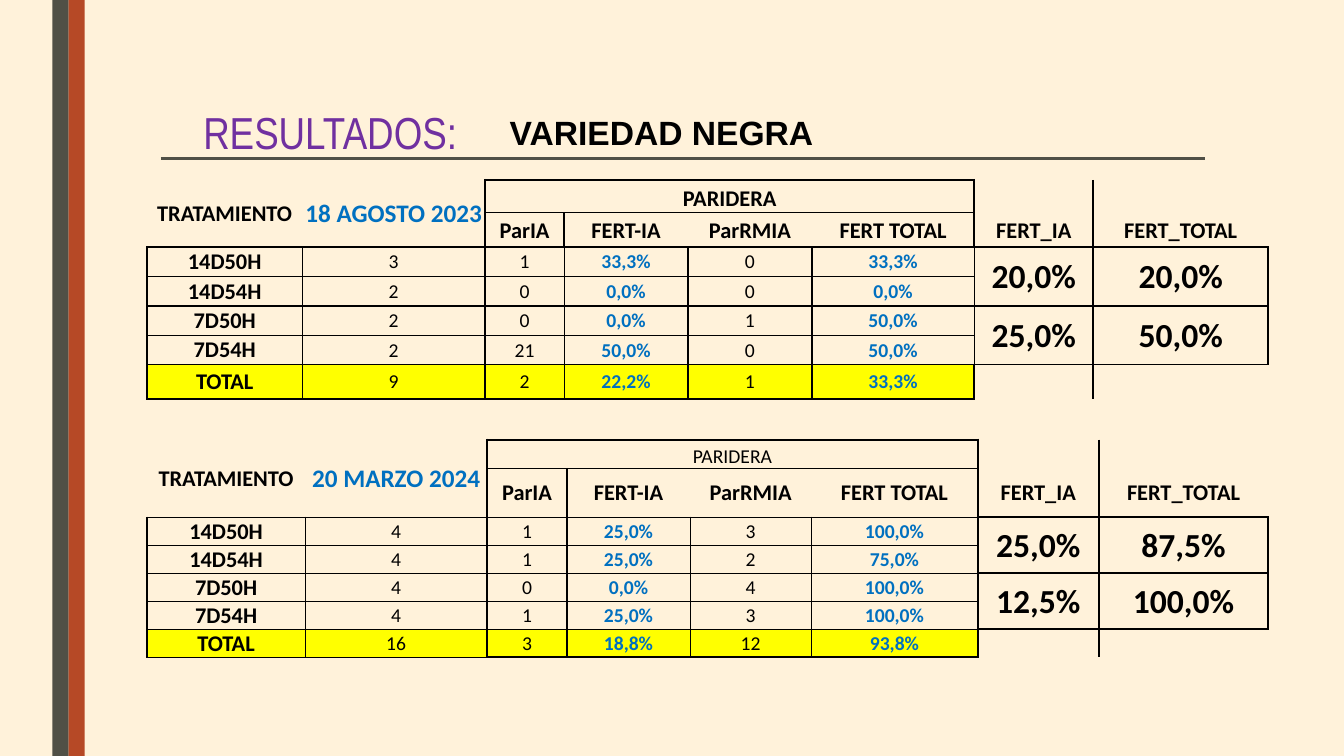
from dataclasses import dataclass

import pptx
import pptx.dml.color
import pptx.enum.shapes
import pptx.enum.text
import pptx.oxml.ns
import pptx.util
from lxml import etree

Pt = pptx.util.Pt
RGB = pptx.dml.color.RGBColor.from_string
ANCHOR = pptx.enum.text.MSO_ANCHOR
ALIGN = pptx.enum.text.PP_ALIGN
qn = pptx.oxml.ns.qn


@dataclass(frozen=True)
class Theme:
    page: str = "FFF2DA"
    olive: str = "505046"
    rust: str = "B64926"
    purple: str = "7030A0"
    blue: str = "0070C0"
    ink: str = "000000"
    total: str = "FFFF00"
    title_font: str = "Arial Narrow"
    variety_font: str = "Arial"
    table_font: str = "Calibri"
    title: int = 32
    big: int = 24
    date: int = 18
    label: int = 16
    value: int = 14
    thick: float = 1.5
    medium: float = 1
    thin: float = 0.5


T = Theme()
NO_GRID_STYLE = "{2D5ABB26-0587-4C30-8999-92F81FD0307C}"
PERCENT_COLS = (3, 5)
RATE_COLS = (6, 7)
BODY_ROW, TOTAL_ROW = 2, 6
SUBHEADS = ["", "", "ParIA", "FERT-IA", "ParRMIA", "FERT TOTAL", "FERT_IA", "FERT_TOTAL"]

# Border boxes: first row, first column, end row, end column, outer width, inner width.
# A box without rows or columns is a single line.
BANDED = [(2, 0, 4, 6, T.thick, T.medium), (4, 0, 6, 6, T.thick, T.medium),
          (6, 0, 7, 6, T.thick, T.medium), (2, 6, 6, 6, T.medium, None)]
EVEN = [(2, 0, 7, 6, T.medium, T.medium), (2, 2, 7, 2, T.thick, None),
        (2, 6, 7, 6, T.thick, None), (7, 2, 7, 6, T.thick, None)]

AUGUST = dict(
    date="18 AGOSTO 2023",
    cols=[111, 130.5, 56.5, 88.5, 88.5, 116, 85, 125],
    rows=[23.5, 24.5, 21, 21, 21, 21, 24.5],
    group_style=(T.label, T.ink, True),
    body_boxes=BANDED,
    body=[["14D50H", "3", "1", "33,3%", "0", "33,3%", "20,0%", "20,0%"],
          ["14D54H", "2", "0", "0,0%", "0", "0,0%", "", ""],
          ["7D50H", "2", "0", "0,0%", "1", "50,0%", "25,0%", "50,0%"],
          ["7D54H", "2", "21", "50,0%", "0", "50,0%", "", ""],
          ["TOTAL", "9", "2", "22,2%", "1", "33,3%", "", ""]])
MARCH = dict(
    date="20 MARZO 2024",
    cols=[113, 130, 57, 88, 86.5, 119, 86.5, 121],
    rows=[20.5, 35, 20, 20, 20, 20, 20],
    group_style=(T.value, T.ink, False),
    body_boxes=EVEN,
    body=[["14D50H", "4", "1", "25,0%", "3", "100,0%", "25,0%", "87,5%"],
          ["14D54H", "4", "1", "25,0%", "2", "75,0%", "", ""],
          ["7D50H", "4", "0", "0,0%", "4", "100,0%", "12,5%", "100,0%"],
          ["7D54H", "4", "1", "25,0%", "3", "100,0%", "", ""],
          ["TOTAL", "16", "3", "18,8%", "12", "93,8%", "", ""]])


def style_text(p, font, size, color, bold=False):
    for r in p.runs:
        r.font.name, r.font.size, r.font.bold = font, Pt(size), bold
        r.font.color.rgb = RGB(color)


def add_stripe(s, left, top, width, height, color):
    sp = s.shapes.add_shape(pptx.enum.shapes.MSO_SHAPE.RECTANGLE,
                            Pt(left), Pt(top), Pt(width), Pt(height))
    sp.shadow.inherit = False
    sp.fill.solid()
    sp.fill.fore_color.rgb = RGB(color)
    sp.line.fill.background()


def add_backdrop(s, left, top, height):
    s.background.fill.solid()
    s.background.fill.fore_color.rgb = RGB(T.page)
    for i, color in enumerate((T.olive, T.rust)):
        add_stripe(s, left + i * 11.5, top, 11.5, height, color)


def add_heading(s, left, top, width, height):
    sp = s.shapes.title
    sp.left, sp.top, sp.width, sp.height = Pt(left + 23), Pt(top), Pt(341), Pt(height)
    variety = s.shapes.add_textbox(Pt(left + 218), Pt(top + 5), Pt(279), Pt(36))
    for box, text, align, style in (
            (sp, "RESULTADOS:", ALIGN.LEFT, (T.title_font, T.title, T.purple)),
            (variety, "VARIEDAD NEGRA", ALIGN.CENTER, (T.variety_font, T.big, T.ink, True))):
        tf = box.text_frame
        tf.text = text
        tf.word_wrap = True
        tf.vertical_anchor = ANCHOR.MIDDLE
        tf.paragraphs[0].alignment = align
        style_text(tf.paragraphs[0], *style)
    rule_y = Pt(top + height - 3.5)
    rule = s.shapes.add_connector(pptx.enum.shapes.MSO_CONNECTOR.STRAIGHT,
                                  Pt(left), rule_y, Pt(left + width), rule_y)
    rule.line.color.rgb = RGB(T.olive)
    rule.line.width = Pt(2.25)
    etree.SubElement(rule._element.spPr, qn("a:effectLst"))


def border_edges(boxes):
    """Map each edge (direction, row, column) to its line width."""
    edges = {}
    for r0, c0, r1, c1, outer, inner in boxes:
        for r in range(r0, r1):
            for c in range(c0, c1 + 1):
                edges["v", r, c] = outer if c in (c0, c1) else inner
        for r in range(r0, r1 + 1):
            for c in range(c0, c1):
                edges["h", r, c] = outer if r in (r0, r1) else inner
    return edges


def draw_borders(cell, r, c, edges):
    tcPr = cell._tc.get_or_add_tcPr()
    rows = cell.span_height if cell.is_merge_origin else 1
    cols = cell.span_width if cell.is_merge_origin else 1
    for tag, edge in (("a:lnL", ("v", r, c)), ("a:lnR", ("v", r, c + cols)),
                      ("a:lnT", ("h", r, c)), ("a:lnB", ("h", r + rows, c))):
        if edges.get(edge):
            ln = etree.SubElement(tcPr, qn(tag), w=str(int(Pt(edges[edge]))))
            fill = etree.SubElement(ln, qn("a:solidFill"))
            etree.SubElement(fill, qn("a:srgbClr"), val=T.ink)


def cell_style(r, c, group_style):
    """Return size, colour and weight for a table position."""
    if r < BODY_ROW:
        if (r, c) == (0, 1):
            return T.date, T.blue, True
        return group_style if (r, c) == (0, 2) else (T.label, T.ink, True)
    if c in RATE_COLS:
        return T.big, T.ink, True
    if c in PERCENT_COLS:
        return T.value, T.blue, True
    return (T.label, T.ink, True) if c == 0 else (T.value, T.ink, False)


def fill_cell(cell, text, style):
    cell.margin_left = cell.margin_right = cell.margin_top = Pt(0.7)
    cell.margin_bottom = Pt(0)
    cell.vertical_anchor = ANCHOR.MIDDLE
    p = cell.text_frame.paragraphs[0]
    p.text = text
    p.alignment = ALIGN.CENTER
    style_text(p, T.table_font, *style)
    if not text:
        etree.SubElement(p._p, qn("a:endParaRPr"), sz=str(T.value * 100))


def add_results(s, left, top, date, cols, rows, group_style, body_boxes, body):
    texts = [["TRATAMIENTO", date, "PARIDERA"] + [""] * 5, SUBHEADS] + body
    frame = s.shapes.add_table(len(rows), len(cols), Pt(left), Pt(top),
                               Pt(sum(cols)), Pt(sum(rows)))
    tbl = frame.table
    tbl.first_row = tbl.horz_banding = False
    tbl._tbl.tblPr.find(qn("a:tableStyleId")).text = NO_GRID_STYLE
    for col, width in zip(tbl.columns, cols):
        col.width = Pt(width)
    for row, height in zip(tbl.rows, rows):
        row.height = Pt(height)

    rate_cells = [(r, c) for r in (2, 4) for c in RATE_COLS]
    for r, c in [(0, 0), (0, 1)] + rate_cells:
        tbl.cell(r, c).merge(tbl.cell(r + 1, c))
    tbl.cell(0, 2).merge(tbl.cell(0, 5))

    head_boxes = [(0, 2, 2, 6, T.thick, None), (1, 2, 1, 6, T.thin, None)]
    rate_boxes = [(r, c, r + 2, c + 1, T.thick, None) for r, c in rate_cells]
    edges = border_edges(head_boxes + rate_boxes + body_boxes)
    for r, line in enumerate(texts):
        for c, text in enumerate(line):
            cell = tbl.cell(r, c)
            fill_cell(cell, text, cell_style(r, c, group_style))
            draw_borders(cell, r, c, edges)
            if r == TOTAL_ROW and c not in RATE_COLS:
                cell.fill.solid()
                cell.fill.fore_color.rgb = RGB(T.total)
            else:
                cell.fill.background()
    tbl.cell(0, 2).vertical_anchor = ANCHOR.BOTTOM


def main():
    prs = pptx.Presentation()
    prs.slide_width, prs.slide_height = Pt(960), Pt(540)
    s = prs.slides.add_slide(prs.slide_layouts[5])
    add_backdrop(s, 37.5, 0, 540)
    add_heading(s, 115, 71, 746, 46)
    add_results(s, 105, 128.5, **AUGUST)
    add_results(s, 105, 314, **MARCH)
    prs.save("out.pptx")


if __name__ == "__main__":
    main()
